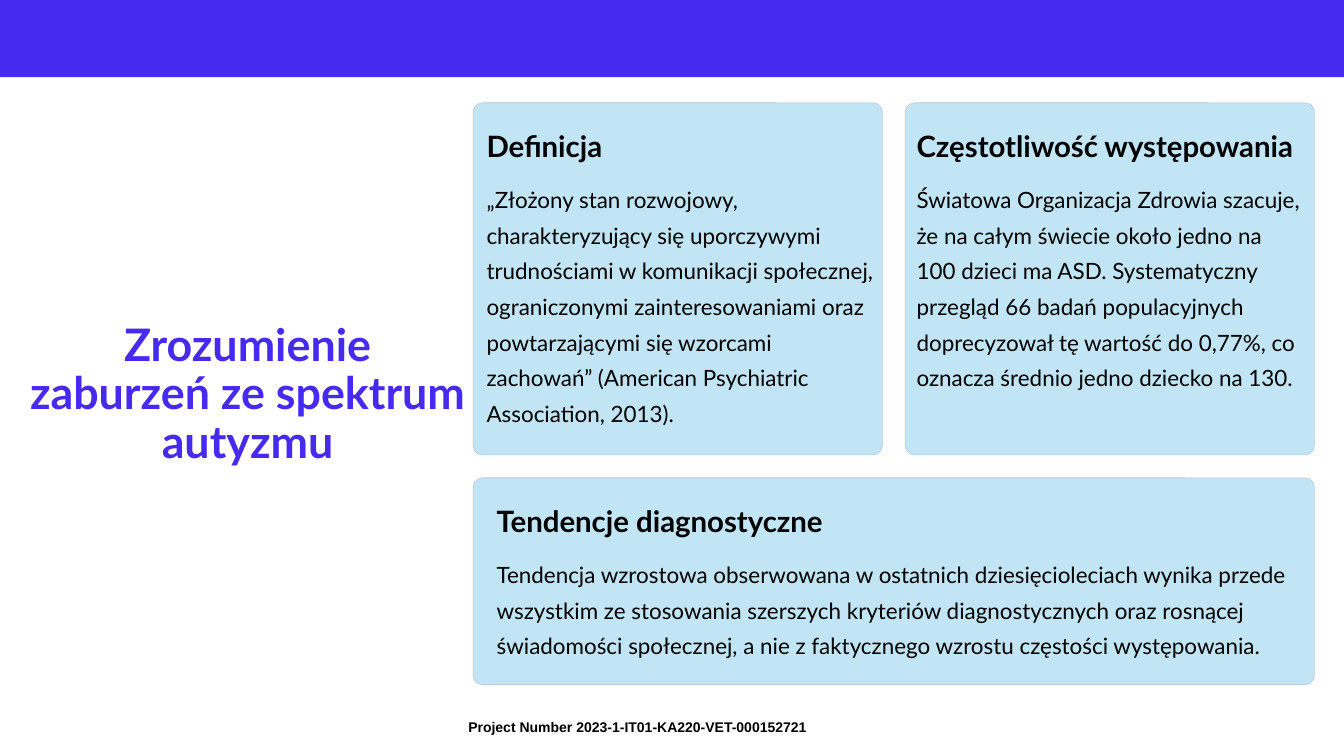
import pptx
import pptx.dml.color
import pptx.enum.shapes
import pptx.enum.text
import pptx.util
from pptx.util import Inches

VIOLET = "462AF0"
PALE_BLUE = "C1E5F5"
CARD_EDGE = "BBC2DC"
BLACK = "000000"


def color(hex_code):
    return pptx.dml.color.RGBColor.from_string(hex_code)


class SlideBuilder:
    """Holds the current slide and the style shared by its elements."""

    font = "Lato"
    corner_radius = 0.14
    heading_drop = 0.35
    body_drop = 1.11

    def __init__(self, slide):
        self.slide = slide

    def text(self, words, left, top, width, height, *, size, hex_code=BLACK,
             font=None, bold=False, wrap=True, inset=None, spacing=None,
             align=None, anchor=pptx.enum.text.MSO_ANCHOR.TOP):
        box = self.slide.shapes.add_textbox(
            Inches(left), Inches(top), Inches(width), Inches(height))
        frame = box.text_frame
        frame.word_wrap = wrap
        frame.vertical_anchor = anchor
        if inset is not None:
            frame.margin_left = frame.margin_right = Inches(inset)
            frame.margin_top = frame.margin_bottom = Inches(inset)
        paragraph = frame.paragraphs[0]
        paragraph.alignment = align
        paragraph.line_spacing = spacing
        run = paragraph.add_run()
        run.text = words
        run.font.name = font or self.font
        run.font.size = pptx.util.Pt(size)
        run.font.bold = bold
        run.font.color.rgb = color(hex_code)

    def panel(self, preset, left, top, width, height, fill, edge=None):
        shape = self.slide.shapes.add_shape(
            preset, Inches(left), Inches(top), Inches(width), Inches(height))
        shape.shadow.inherit = False
        shape.fill.solid()
        shape.fill.fore_color.rgb = color(fill)
        if edge:
            shape.line.color.rgb = color(edge)
            shape.line.width = pptx.util.Pt(0.6)
        else:
            shape.line.fill.background()
        return shape

    def card(self, heading, body, left, top, width, height, text_left, text_width):
        """Rounded panel with a one-line heading above a paragraph."""
        panel = self.panel(pptx.enum.shapes.MSO_SHAPE.ROUNDED_RECTANGLE,
                           left, top, width, height, PALE_BLUE, CARD_EDGE)
        panel.adjustments[0] = self.corner_radius / min(width, height)
        self.text(heading, text_left, top + self.heading_drop, text_width, 0.56,
                  size=31.5, bold=True, inset=0, spacing=pptx.util.Pt(39.8))
        self.text(body, text_left, top + self.body_drop, text_width,
                  height - self.body_drop - self.heading_drop,
                  size=24, inset=0, spacing=pptx.util.Pt(38.2))


def main():
    deck = pptx.Presentation()
    deck.slide_width = Inches(20)
    deck.slide_height = Inches(11.25)
    builder = SlideBuilder(deck.slides.add_slide(deck.slide_layouts[6]))

    builder.text("Project Number 2023-1-IT01-KA220-VET-000152721",
                 6.87, 10.65, 5.31, 0.35,
                 size=15, font="Arial", bold=True, wrap=False)
    builder.panel(pptx.enum.shapes.MSO_SHAPE.RECTANGLE,
                  0, -0.02, 20, 1.17, VIOLET)
    builder.text("Zrozumienie zaburzeń ze spektrum autyzmu",
                 0.33, 4.8, 6.71, 2.17, size=48, hex_code=VIOLET, bold=True,
                 spacing=0.9, align=pptx.enum.text.PP_ALIGN.CENTER,
                 anchor=pptx.enum.text.MSO_ANCHOR.MIDDLE)

    cards_left, cards_top, gap = 7.04, 1.53, 0.34
    upper_width, upper_height = 6.09, 5.24
    right_left = cards_left + upper_width + gap
    lower_top = cards_top + upper_height + gap

    builder.card(
        "Definicja",
        "„Złożony stan rozwojowy, charakteryzujący się uporczywymi trudnościami "
        "w komunikacji społecznej, ograniczonymi zainteresowaniami oraz "
        "powtarzającymi się wzorcami zachowań” (American Psychiatric "
        "Association, 2013).",
        cards_left, cards_top, upper_width, upper_height,
        text_left=7.24, text_width=5.89)
    builder.card(
        "Częstotliwość występowania",
        "Światowa Organizacja Zdrowia szacuje, że na całym świecie około jedno "
        "na 100 dzieci ma ASD. Systematyczny przegląd 66 badań populacyjnych "
        "doprecyzował tę wartość do 0,77%, co oznacza średnio jedno dziecko "
        "na 130.",
        right_left, cards_top, upper_width, upper_height,
        text_left=13.64, text_width=5.74)
    builder.card(
        "Tendencje diagnostyczne",
        "Tendencja wzrostowa obserwowana w ostatnich dziesięcioleciach wynika "
        "przede wszystkim ze stosowania szerszych kryteriów diagnostycznych oraz "
        "rosnącej świadomości społecznej, a nie z faktycznego wzrostu częstości "
        "występowania.",
        cards_left, lower_top, 2 * upper_width + gap, 3.08,
        text_left=7.39, text_width=11.81)

    deck.save("out.pptx")


if __name__ == "__main__":
    main()
